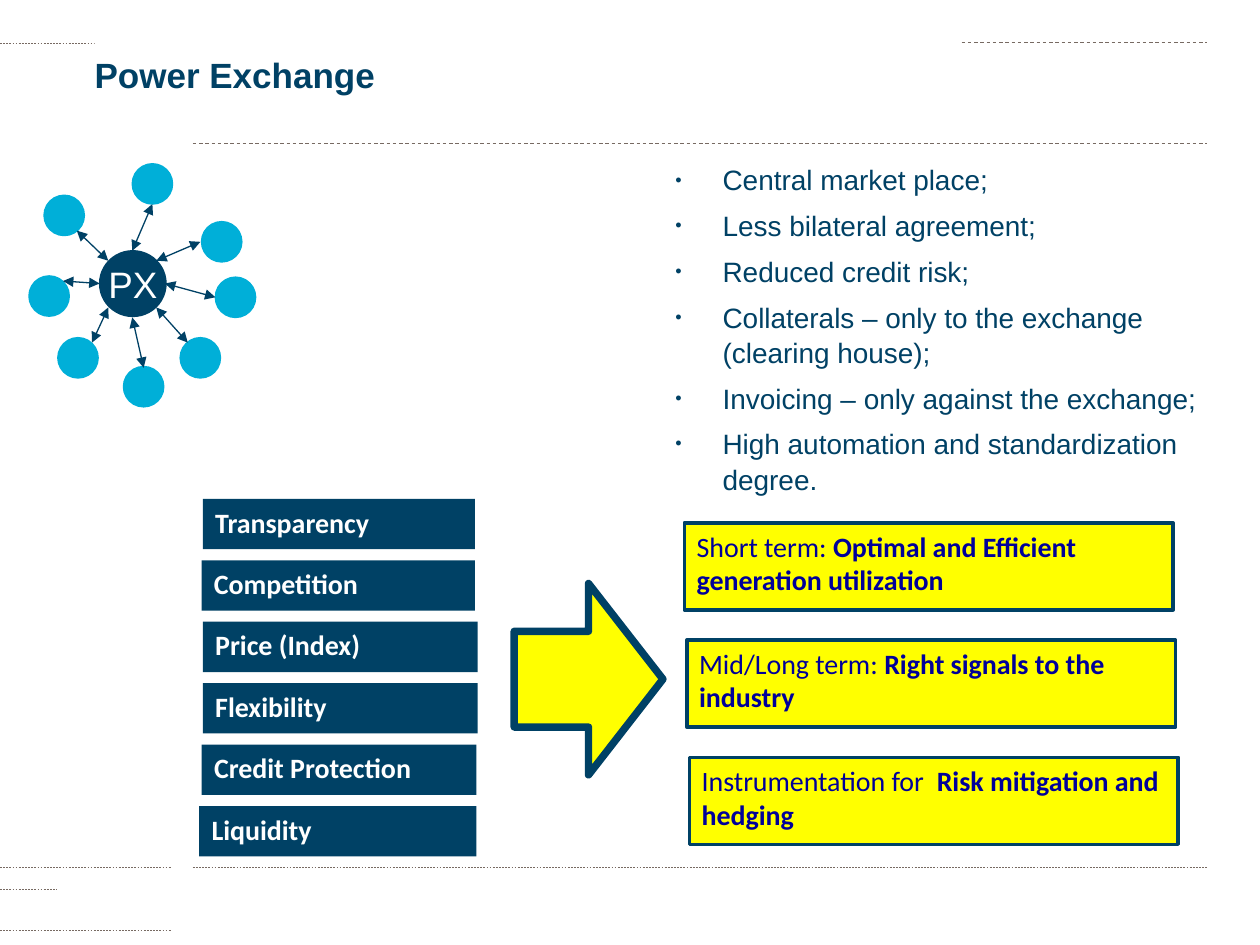
import pptx
import pptx.util
import pptx.dml.color
import pptx.enum.dml
import pptx.enum.shapes
import pptx.enum.text
import pptx.oxml.ns
import lxml.etree

Pt = pptx.util.Pt
Shape = pptx.enum.shapes.MSO_SHAPE
Anchor = pptx.enum.text.MSO_ANCHOR
Align = pptx.enum.text.PP_ALIGN

THEME = {
    "navy": "004165", "cyan": "00AFD8", "yellow": "FFFF00", "ink": "000099",
    "white": "FFFFFF", "rule": "776A62",
    "heading_font": "Arial", "box_font": "Calibri",
    "title_size": 20, "text_size": 16, "hub_size": 21,
}

TITLE = "Power Exchange"
FEATURES = [
    "Central market place;",
    "Less bilateral agreement;",
    "Reduced credit risk;",
    "Collaterals – only to the exchange (clearing house);",
    "Invoicing – only against the exchange;",
    "High automation and standardization degree.",
]
BENEFITS = [
    ("Transparency", 115.9, 155.5),
    ("Competition", 115.2, 156.2),
    ("Price (Index)", 115.9, 157),
    ("Flexibility", 115.9, 157),
    ("Credit Protection", 115.2, 157),
    ("Liquidity", 113.8, 158.4),
]
OUTCOMES = [
    ("Short term: ", "Optimal and Efficient generation utilization"),
    ("Mid/Long term: ", "Right signals to the industry"),
    ("Instrumentation for  ", "Risk mitigation and hedging"),
]
RULES = [
    (110.2, 689.8, 495.4, 0.25),
    (0, 97.9, 24.5, 0.25),
    (0, 97.9, 495.4, 0.25),
    (0, 97.9, 531.4, 0.25),
    (0, 32.4, 508.3, 0.25),
    (110.2, 689.8, 82.1, 0.5),
    (110.2, 689.8, 24.5, 0.5),
]
HUB = (56.9, 143.3, 38, 37.6)
PARTICIPANT_SIZE = 21.6
PARTICIPANTS = [
    (25.9, 112.3), (17.3, 158.4), (33.8, 193.7), (71.3, 210.2),
    (103.7, 193.7), (123.8, 159.1), (115.9, 127.4), (76.3, 94.3),
]
TRADES = [
    (36, 160.6, 56.9, 162), (52.6, 195.8, 61.9, 175.7),
    (107.3, 195.8, 89.3, 175.7), (61.9, 149, 43.9, 131.8),
    (75.6, 143.3, 87.1, 116.6), (89.3, 149, 114.5, 138.2),
    (75.6, 181.4, 82.1, 210.2), (94.3, 162, 123.1, 169.9),
]
BENEFIT_TOP, BENEFIT_PITCH, BENEFIT_HEIGHT = 285.1, 35.1, 28.8
OUTCOME_LEFT, OUTCOME_SHIFT = 391, 1.44
OUTCOME_TOP, OUTCOME_PITCH = 298.8, 67
OUTCOME_WIDTH, OUTCOME_HEIGHT = 279.4, 49.7


def color(name):
    return pptx.dml.color.RGBColor.from_string(THEME[name])


def add_child(parent, tag, **attributes):
    return lxml.etree.SubElement(parent, pptx.oxml.ns.qn(tag), attributes)


def fill_shape(shape, fill):
    shape.fill.solid()
    shape.fill.fore_color.rgb = color(fill)


def add_run(paragraph, text, font, size, ink, bold=False):
    run = paragraph.add_run()
    run.text = text
    run.font.name = THEME[font]
    run.font.size = Pt(THEME[size])
    run.font.color.rgb = color(ink)
    run.font.bold = bold


def place(shape, left, top, width, height):
    shape.left, shape.top = Pt(left), Pt(top)
    shape.width, shape.height = Pt(width), Pt(height)


def add_block(slide, kind, box, fill, outline=None, width=0):
    shape = slide.shapes.add_shape(kind, *map(Pt, box))
    shape.shadow.inherit = False
    fill_shape(shape, fill)
    if outline:
        shape.line.color.rgb = color(outline)
        shape.line.width = Pt(width)
    else:
        shape.line.fill.background()
    return shape


def first_paragraph(shape, anchor, alignment):
    shape.text_frame.word_wrap = True
    shape.text_frame.vertical_anchor = anchor
    paragraph = shape.text_frame.paragraphs[0]
    paragraph.alignment = alignment
    return paragraph


def add_line(slide, points, ink, width):
    line = slide.shapes.add_connector(
        pptx.enum.shapes.MSO_CONNECTOR.STRAIGHT, *map(Pt, points))
    line.line.color.rgb = color(ink)
    line.line.width = Pt(width)
    add_child(line.element.spPr, "a:effectLst")
    return line


def add_rules(slide):
    for left, right, y, width in RULES:
        rule = add_line(slide, (left, y, right, y), "rule", width)
        rule.line.dash_style = pptx.enum.dml.MSO_LINE.DASH


def add_title(slide):
    title = slide.shapes.title
    title.element.getparent().append(title.element)
    place(title, 54, 20.2, 493.9, 48.2)
    fill_shape(title, "white")
    title.text_frame.margin_left = title.text_frame.margin_right = 0
    title.text_frame.auto_size = pptx.enum.text.MSO_AUTO_SIZE.NONE
    paragraph = first_paragraph(title, Anchor.MIDDLE, Align.LEFT)
    paragraph.line_spacing = 0.9
    add_run(paragraph, TITLE, "heading_font", "title_size", "navy", True)


def add_features(slide):
    body = slide.placeholders[1]
    place(body, 378.7, 88.6, 324.7, 211.7)
    fill_shape(body, "white")
    frame = body.text_frame
    frame.auto_size = pptx.enum.text.MSO_AUTO_SIZE.NONE
    for index, feature in enumerate(FEATURES):
        paragraph = frame.add_paragraph() if index else first_paragraph(body, Anchor.TOP, Align.LEFT)
        properties = paragraph._p.get_or_add_pPr()
        properties.set("marL", str(Pt(27)))
        properties.set("indent", str(-Pt(27)))
        add_child(properties, "a:buSzPct", val="65000")
        add_child(properties, "a:buFont", typeface=THEME["heading_font"])
        add_child(properties, "a:buChar", char="•")
        paragraph.space_before = Pt(6 if index else 0)
        paragraph.line_spacing = 1.05
        add_run(paragraph, feature, "heading_font", "text_size", "navy")


def add_exchange(slide):
    for left, top in PARTICIPANTS:
        box = (left, top, PARTICIPANT_SIZE, PARTICIPANT_SIZE)
        add_block(slide, Shape.OVAL, box, "cyan", "cyan", 2.25)
    for points in TRADES:
        trade = add_line(slide, points, "navy", 0.75)
        outline = trade.element.spPr.find(pptx.oxml.ns.qn("a:ln"))
        for end in ("a:headEnd", "a:tailEnd"):
            add_child(outline, end, type="triangle")
    hub = add_block(slide, Shape.OVAL, HUB, "navy", "navy", 0.75)
    paragraph = first_paragraph(hub, Anchor.MIDDLE, Align.CENTER)
    hub.text_frame.word_wrap = False
    add_run(paragraph, "PX", "heading_font", "hub_size", "white")


def add_outcomes(slide):
    add_block(slide, Shape.RIGHT_ARROW, (293.8, 333.4, 85, 109.4), "yellow", "navy", 4.25)
    for index, (lead, result) in enumerate(OUTCOMES):
        box = (OUTCOME_LEFT + index * OUTCOME_SHIFT, OUTCOME_TOP + index * OUTCOME_PITCH,
               OUTCOME_WIDTH, OUTCOME_HEIGHT)
        outcome = add_block(slide, Shape.RECTANGLE, box, "yellow", "navy", 2)
        paragraph = first_paragraph(outcome, Anchor.TOP, Align.LEFT)
        add_run(paragraph, lead, "box_font", "text_size", "ink")
        add_run(paragraph, result, "box_font", "text_size", "ink", True)


def add_benefits(slide):
    for index, (name, left, width) in enumerate(BENEFITS):
        box = (left, BENEFIT_TOP + index * BENEFIT_PITCH, width, BENEFIT_HEIGHT)
        benefit = add_block(slide, Shape.RECTANGLE, box, "navy")
        paragraph = first_paragraph(benefit, Anchor.TOP, Align.LEFT)
        add_run(paragraph, name, "box_font", "text_size", "white", True)


def main():
    presentation = pptx.Presentation()
    presentation.slide_width, presentation.slide_height = Pt(720), Pt(540)
    slide = presentation.slides.add_slide(presentation.slide_layouts[1])
    add_rules(slide)
    add_features(slide)
    add_title(slide)
    add_exchange(slide)
    add_outcomes(slide)
    add_benefits(slide)
    presentation.save("out.pptx")


if __name__ == "__main__":
    main()
